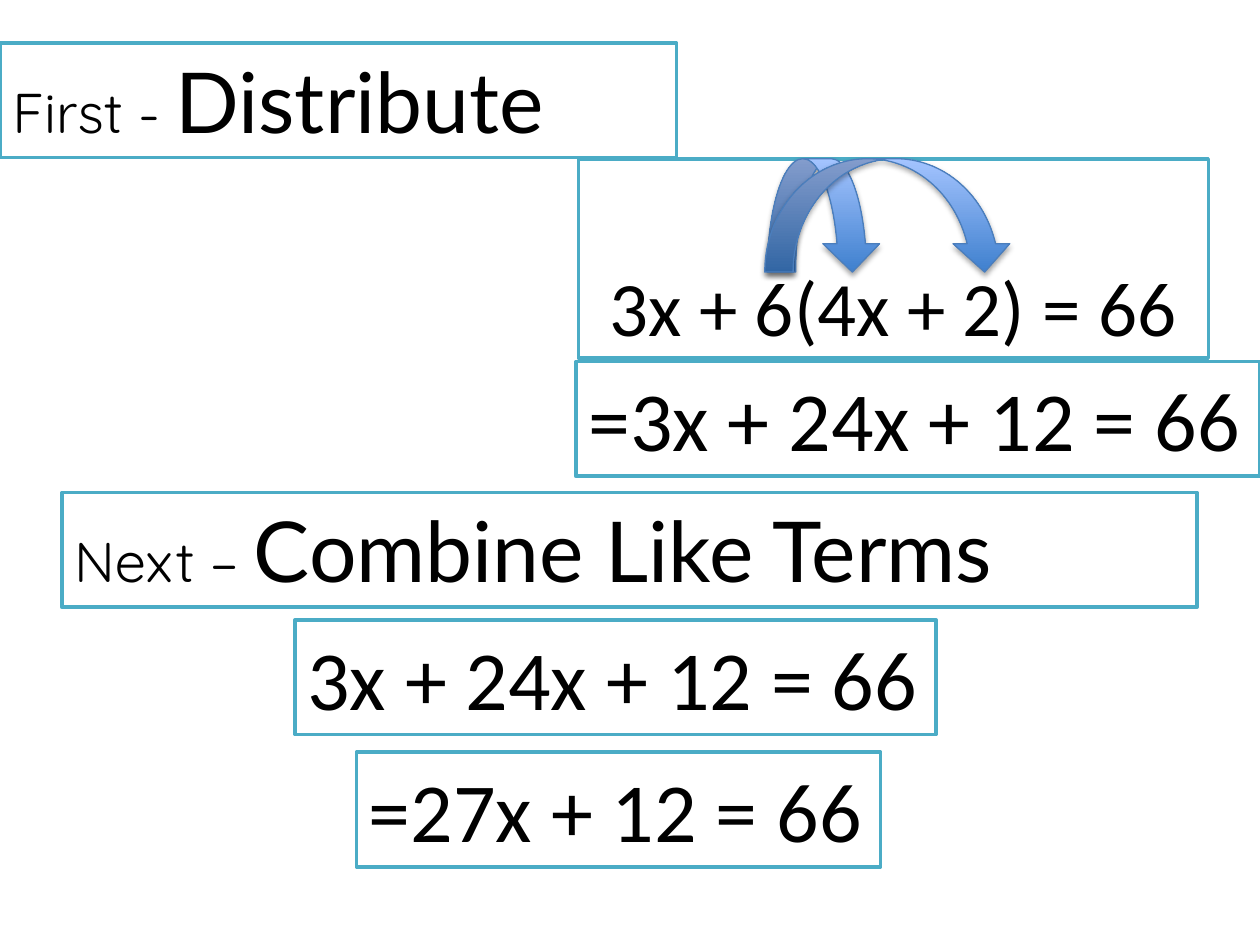
from typing import NamedTuple

import lxml.etree
import pptx
import pptx.dml.color
import pptx.enum.shapes
import pptx.enum.text
import pptx.oxml
import pptx.oxml.ns
import pptx.util
from pptx.util import Inches

SHAPES = pptx.enum.shapes.MSO_SHAPE
ALIGN = pptx.enum.text.PP_ALIGN
ANCHOR = pptx.enum.text.MSO_ANCHOR
STEP_HEIGHT = 0.91
ARROW_TOP = 1.26
ARROW_HEIGHT = 0.9


class Run(NamedTuple):
    text: str
    size: int = 48
    font: str = "Calibri"


class Box(NamedTuple):
    left: float
    top: float
    width: float
    runs: list[Run]
    height: float = STEP_HEIGHT
    align: ALIGN = ALIGN.LEFT
    anchor: ANCHOR = ANCHOR.TOP


class Arrow(NamedTuple):
    left: float
    width: float


def heading(label: str, title: str) -> list[Run]:
    return [Run(label, 32, "Quicksand"), Run(title, font="Lato")]


BOXES = [
    Box(0, 0.34, 5.37, heading("First - ", "Distribute")),
    Box(4.57, 2.87, 5.43, [Run("=3x + 24x + 12 = 66")]),
    Box(4.59, 1.26, 5, [Run("3x + 6(4x + 2) = 66", 44)], 1.58, ALIGN.CENTER, ANCHOR.BOTTOM),
    Box(0.49, 3.91, 9.01, heading("Next – ", "Combine Like Terms")),
    Box(2.34, 4.92, 5.09, [Run("3x + 24x + 12 = 66")]),
    Box(2.83, 5.97, 4.16, [Run("=27x + 12 = 66")]),
]
ARROWS = [Arrow(6.09, 0.9), Arrow(6.07, 1.97)]
BOXES_BEHIND_ARROWS = 3


def color(value: str) -> pptx.dml.color.RGBColor:
    return pptx.dml.color.RGBColor.from_string(value)


def draw_box(slide: pptx.slide.Slide, box: Box) -> None:
    shape = slide.shapes.add_shape(
        SHAPES.RECTANGLE, Inches(box.left), Inches(box.top), Inches(box.width), Inches(box.height)
    )
    shape.shadow.inherit = False
    shape.fill.solid()
    shape.fill.fore_color.rgb = color("FFFFFF")
    shape.line.color.rgb = color("4BACC6")
    shape.line.width = pptx.util.Pt(2)

    frame = shape.text_frame
    frame.word_wrap = True
    frame.vertical_anchor = box.anchor
    paragraph = frame.paragraphs[0]
    paragraph.alignment = box.align
    for item in box.runs:
        run = paragraph.add_run()
        run.text = item.text
        run.font.size = pptx.util.Pt(item.size)
        run.font.name = item.font
        run.font.color.rgb = color("000000")


def add_soft_shadow(shape: pptx.shapes.autoshape.Shape) -> None:
    shape.shadow.inherit = False
    effects = shape.element.spPr.find(pptx.oxml.ns.qn("a:effectLst"))
    shadow = lxml.etree.SubElement(
        effects,
        pptx.oxml.ns.qn("a:outerShdw"),
        blurRad=str(pptx.util.Pt(3.1)),
        dist=str(pptx.util.Pt(1.8)),
        dir="5400000",
        rotWithShape="0",
    )
    tint = lxml.etree.SubElement(shadow, pptx.oxml.ns.qn("a:srgbClr"), val="000000")
    lxml.etree.SubElement(tint, pptx.oxml.ns.qn("a:alpha"), val="35000")


def draw_arrow(slide: pptx.slide.Slide, arrow: Arrow) -> None:
    shape = slide.shapes.add_shape(
        SHAPES.CURVED_DOWN_ARROW,
        Inches(arrow.left), Inches(ARROW_TOP), Inches(arrow.width), Inches(ARROW_HEIGHT),
    )
    shape.fill.gradient()
    shape.fill.gradient_angle = 90
    for stop, value in zip(shape.fill.gradient_stops, ("3F80CE", "A4C4FF")):
        stop.color.rgb = color(value)
    shape.line.color.rgb = color("4B7EBC")
    shape.line.width = pptx.util.Pt(0.75)
    add_soft_shadow(shape)


def main() -> None:
    presentation = pptx.Presentation()
    presentation.slide_width = Inches(10)
    presentation.slide_height = Inches(7.5)
    slide = presentation.slides.add_slide(presentation.slide_layouts[6])

    for box in BOXES[:BOXES_BEHIND_ARROWS]:
        draw_box(slide, box)
    for arrow in ARROWS:
        draw_arrow(slide, arrow)
    for box in BOXES[BOXES_BEHIND_ARROWS:]:
        draw_box(slide, box)

    presentation.save("out.pptx")


if __name__ == "__main__":
    main()
